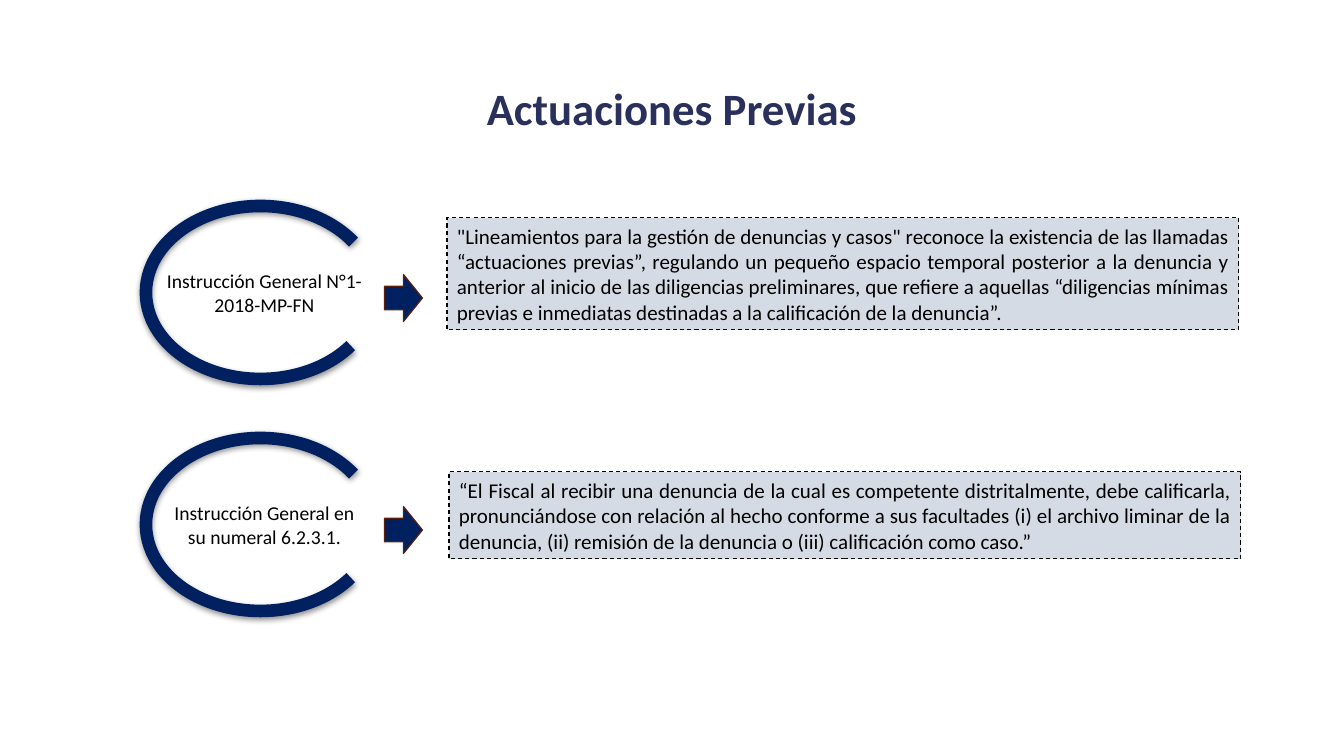
from lxml.etree import SubElement
from pptx import Presentation
from pptx.dml.color import RGBColor
from pptx.enum.dml import MSO_LINE
from pptx.enum.shapes import MSO_SHAPE as SHAPE
from pptx.enum.text import MSO_ANCHOR as ANCHOR, MSO_AUTO_SIZE as FIT, PP_ALIGN as ALIGN
from pptx.oxml import parse_xml
from pptx.oxml.ns import nsdecls
from pptx.util import Pt

PX = 12192000 / 1344
NAVY, BLACK = "002060", "000000"


def color(value):
    return RGBColor.from_string(value)


def write(shape, text, size, ink=BLACK, bold=False, align=ALIGN.CENTER):
    frame = shape.text_frame
    frame.word_wrap = True
    frame.auto_size = FIT.NONE
    frame.vertical_anchor = ANCHOR.MIDDLE
    paragraph = frame.paragraphs[0]
    paragraph.alignment = align
    run = paragraph.add_run()
    run.text = text
    font = run.font
    font.name, font.size, font.bold = "Calibri", Pt(size), bold
    font.color.rgb = color(ink)


prs = Presentation()
prs.slide_width, prs.slide_height = round(1344 * PX), round(756 * PX)
slide = prs.slides.add_slide(prs.slide_layouts[5])

title = slide.shapes.title
title.left, title.top, title.width, title.height = [round(v * PX) for v in (252, 75, 840, 65)]
write(title, "Actuaciones Previas", 32, ink="29305C", bold=True)

instructions = [
    ("Instrucción General N°1-2018-MP-FN",
     '"Lineamientos para la gestión de denuncias y casos" reconoce la existencia de las llamadas '
     "“actuaciones previas”, regulando un pequeño espacio temporal posterior a la denuncia y "
     "anterior al inicio de las diligencias preliminares, que refiere a aquellas “diligencias "
     "mínimas previas e inmediatas destinadas a la calificación de la denuncia”.",
     (447, 218, 792, 112)),
    ("Instrucción General en su numeral 6.2.3.1.",
     "“El Fiscal al recibir una denuncia de la cual es competente distritalmente, debe "
     "calificarla, pronunciándose con relación al hecho conforme a sus facultades (i) el archivo "
     "liminar de la denuncia, (ii) remisión de la denuncia o (iii) calificación como caso.”",
     (449, 472, 792, 87)),
]

for row, (source, passage, passage_area) in enumerate(instructions):
    drop = row * 232
    parts = [
        (SHAPE.RECTANGLE, (155, 264 + drop, 219, 57), "FFFFFF", None, 0),
        (SHAPE.ARC, (146, 206 + drop, 229, 173), None, NAVY, 9),
        (SHAPE.DOWN_ARROW, (380, 279 + drop, 47, 38), NAVY, "5C200A", 0.85),
        (SHAPE.RECTANGLE, passage_area, "D5DBE5", BLACK, 0.75),
    ]
    drawn = []
    for kind, area, fill, line, weight in parts:
        part = slide.shapes.add_shape(kind, *[round(v * PX) for v in area])
        part.shadow.inherit = False
        if fill:
            part.fill.solid()
            part.fill.fore_color.rgb = color(fill)
        else:
            part.fill.background()
        if line:
            part.line.color.rgb = color(line)
            part.line.width = Pt(weight)
        else:
            part.line.fill.background()
        drawn.append(part)
    label, ring, arrow, quote = drawn

    write(label, source, 14)

    for i, degrees in enumerate((208.41, 149.52)):
        ring.adjustments[i] = degrees * 0.6
    properties = ring._element.spPr
    properties.xfrm.set("flipH", "1")
    effects = properties.find("{*}effectLst")
    effects.append(parse_xml(
        f'<a:outerShdw {nsdecls("a")} blurRad="{Pt(4.5)}" dist="{Pt(1.5)}" dir="5400000" '
        'rotWithShape="0"><a:srgbClr val="000000"><a:alpha val="44000"/></a:srgbClr></a:outerShdw>'))

    arrow.rotation = 270

    quote.line.dash_style = MSO_LINE.DASH
    write(quote, passage, 15, align=ALIGN.JUSTIFY)

prs.save("out.pptx")
